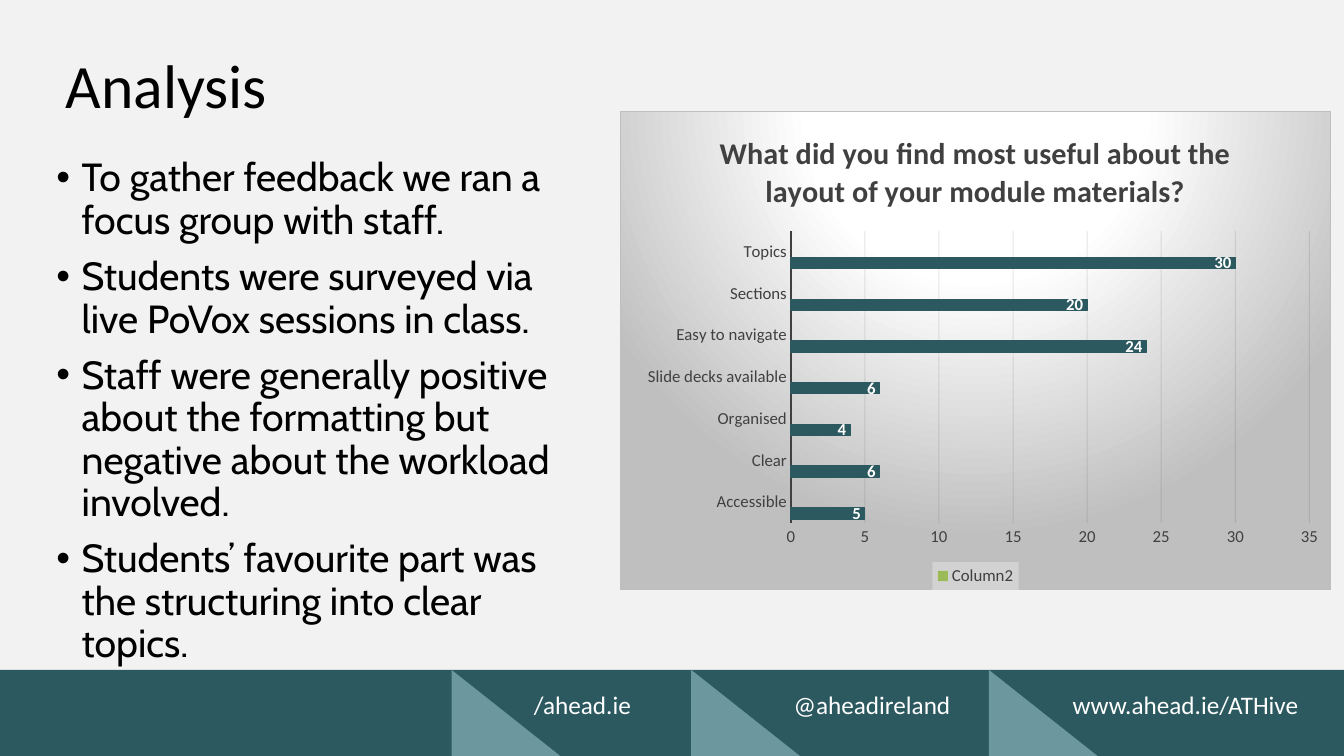
from dataclasses import dataclass
from lxml.etree import SubElement
from pptx import Presentation
from pptx.chart.data import CategoryChartData as ChartData
from pptx.dml.color import RGBColor as Color
from pptx.enum.chart import XL_CHART_TYPE as Kind, XL_LABEL_POSITION as Spot
from pptx.enum.chart import XL_LEGEND_POSITION as Side, XL_TICK_MARK as Tick
from pptx.enum.shapes import MSO_SHAPE as Shape
from pptx.enum.text import MSO_ANCHOR as Anchor, PP_ALIGN as Align
from pptx.oxml import parse_xml
from pptx.oxml.ns import nsdecls, qn
from pptx.util import Cm, Pt


@dataclass(frozen=True)
class Theme:
    back: str = "F2F2F2"
    teal: str = "2C595F"
    pale: str = "6C979E"
    ink: str = "000000"
    grey: str = "404040"
    edge: str = "BFBFBF"
    grid: str = "0D0D0D"
    white: str = "FFFFFF"
    sans: str = "Calibri"
    text: str = "Cabin"
    head: float = 44
    body: float = 28
    link: float = 18
    title: float = 21.6
    label: float = 12


THEME = Theme()
POINTS = [
    "To gather feedback we ran a focus group with staff.",
    "Students were surveyed via live PoVox sessions in class.",
    "Staff were generally positive about the formatting but negative "
    "about the workload involved.",
    "Students’ favourite part was the structuring into clear topics.",
]
# Left edge of each triangle, right edge of its text, text
LINKS = [
    (11.38, 16.15, "/ahead.ie"),
    (17.42, 24.2, "@aheadireland"),
    (24.92, 32.97, "www.ahead.ie/ATHive"),
]
QUESTION = "What did you find most useful about the layout of your module materials?"
VOTES = {"Accessible": 5, "Clear": 6, "Organised": 4, "Slide decks available": 6,
         "Easy to navigate": 24, "Sections": 20, "Topics": 30}


def style(font, size, color, name=THEME.sans, bold=False):
    font.name, font.size, font.bold = name, Pt(size), bold
    font.color.rgb = Color.from_string(color)


def paint(fill, color):
    fill.solid()
    fill.fore_color.rgb = Color.from_string(color)


def block(slide, kind, box, color):
    shape = slide.shapes.add_shape(kind, *map(Cm, box))
    shape.shadow.inherit = False
    paint(shape.fill, color)
    shape.line.fill.background()


def footer(slide, box):
    left, top, width, height = box
    block(slide, Shape.RECTANGLE, box, THEME.teal)
    for start, end, text in LINKS:
        block(slide, Shape.RIGHT_TRIANGLE, (left + start, top, 2.74, height), THEME.pale)
        label = slide.shapes.add_textbox(
            Cm(left + start), Cm(top + 0.25), Cm(end - start), Cm(1.32))
        frame = label.text_frame
        frame.word_wrap = True
        frame.margin_top = frame.margin_right = Cm(0.25)
        line = frame.paragraphs[0]
        line.text, line.alignment = text, Align.RIGHT
        style(line.font, THEME.link, THEME.white)


def heading(slide, box):
    title = slide.shapes.title
    title.left, title.top, title.width, title.height = map(Cm, box)
    title.text_frame.vertical_anchor = Anchor.MIDDLE
    line = title.text_frame.paragraphs[0]
    line.text, line.alignment, line.line_spacing = "Analysis", Align.LEFT, 0.9
    style(line.font, THEME.head, THEME.ink)


def bullets(slide, box):
    frame = slide.shapes.add_textbox(*map(Cm, box)).text_frame
    frame.word_wrap = True
    for i, text in enumerate(POINTS):
        line = frame.add_paragraph() if i else frame.paragraphs[0]
        line.text, line.line_spacing = text, 0.9
        line.space_before = Pt(10 if i else 0)
        props = line._p.get_or_add_pPr()
        props.set("marL", str(Cm(0.64)))
        props.set("indent", str(-Cm(0.64)))
        SubElement(props, qn("a:buFont"), typeface="Arial")
        SubElement(props, qn("a:buChar"), char="•")
        style(line.font, THEME.body, THEME.ink, THEME.text)


def fade(color, share):
    """Set the opacity, in percent, of the solid colour inside an element."""
    SubElement(color.find(".//" + qn("a:srgbClr")), qn("a:alpha"), val=str(share * 1000))


def backdrop(chart):
    """Give the chart area a radial gradient and a thin border."""
    stops = [(0, THEME.white), (39, THEME.white), (100, THEME.edge)]
    marks = "".join(f'<a:gs pos="{at * 1000}"><a:srgbClr val="{color}"/></a:gs>'
                    for at, color in stops)
    chart._chartSpace.find(qn("c:chart")).addnext(parse_xml(
        f'<c:spPr {nsdecls("c", "a")}><a:gradFill><a:gsLst>{marks}</a:gsLst>'
        '<a:path path="circle"><a:fillToRect l="50000" t="-80000" r="50000" b="180000"/>'
        f'</a:path></a:gradFill><a:ln w="{Pt(0.75)}"><a:solidFill>'
        f'<a:srgbClr val="{THEME.edge}"/></a:solidFill></a:ln></c:spPr>'))


def arrange(chart, x, y, w, h):
    """Place the inner plot by shares of the chart's size."""
    area = chart._chartSpace.find(".//" + qn("c:plotArea"))
    for old in area.findall(qn("c:layout")):
        area.remove(old)
    area.insert(0, parse_xml(
        f'<c:layout {nsdecls("c")}><c:manualLayout><c:layoutTarget val="inner"/>'
        '<c:xMode val="edge"/><c:yMode val="edge"/>'
        f'<c:x val="{x}"/><c:y val="{y}"/><c:w val="{w}"/><c:h val="{h}"/>'
        '</c:manualLayout></c:layout>'))


def key(chart):
    """Show a legend for the first series only."""
    chart.has_legend = True
    legend = chart.legend
    legend.position, legend.include_in_layout = Side.BOTTOM, False
    style(legend.font, THEME.label, THEME.grey)
    root = legend._element
    for i in (2, 1):
        root.find(qn("c:legendPos")).addnext(parse_xml(
            f'<c:legendEntry {nsdecls("c")}><c:idx val="{i}"/><c:delete val="1"/>'
            '</c:legendEntry>'))
    tint = parse_xml(
        f'<c:spPr {nsdecls("c", "a")}><a:solidFill><a:srgbClr val="{THEME.back}"/>'
        '</a:solidFill></c:spPr>')
    fade(tint, 39)
    root.find(qn("c:txPr")).addprevious(tint)


def axes(chart):
    cats, vals = chart.category_axis, chart.value_axis
    for axis in (cats, vals):
        axis.major_tick_mark = axis.minor_tick_mark = Tick.NONE
        style(axis.tick_labels.font, THEME.label, THEME.grey)
    paint(cats.format.line.fill, THEME.grey)
    cats.format.line.width = Pt(1.5)
    vals.minimum_scale, vals.maximum_scale, vals.major_unit = 0, 35, 5
    vals.format.line.fill.background()
    vals.has_major_gridlines = True
    grid = vals.major_gridlines.format.line
    paint(grid.fill, THEME.grid)
    grid.width = Pt(0.75)
    fade(vals._element.find(qn("c:majorGridlines")), 10)


def survey(slide, box):
    data = ChartData()
    data.categories = list(VOTES)
    data.add_series("No. of responses", list(VOTES.values()))
    for name in ("Series 2", "Column2"):
        data.add_series(name, [None] * len(VOTES))
    chart = slide.shapes.add_chart(Kind.BAR_CLUSTERED, *map(Cm, box), data).chart
    style(chart.font, 10, THEME.ink)
    chart.has_title = True
    line = chart.chart_title.text_frame.paragraphs[0]
    line.text = QUESTION
    style(line.font, THEME.title, THEME.grey, bold=True)
    plot = chart.plots[0]
    plot.gap_width, plot.overlap, plot.vary_by_categories = 65, 0, False
    bars = plot.series[0]
    paint(bars.format.fill, THEME.teal)
    paint(bars.format.line.fill, THEME.teal)
    bars.format.line.width = Pt(0.75)
    labels = bars.data_labels
    labels.show_value, labels.position = True, Spot.INSIDE_END
    style(labels.font, THEME.label, THEME.white, bold=True)
    axes(chart)
    key(chart)
    arrange(chart, 0.24, 0.25, 0.73, 0.61)
    backdrop(chart)


def main():
    deck = Presentation()
    deck.slide_width, deck.slide_height = Cm(33.87), Cm(19.05)
    slide = deck.slides.add_slide(deck.slide_layouts[5])
    paint(slide.background.fill, THEME.back)
    footer(slide, (0, 16.88, 33.87, 2.17))
    heading(slide, (1.4, 0.4, 29.21, 3.68))
    bullets(slide, (1.17, 3.86, 13.97, 12.09))
    survey(slide, (15.62, 2.79, 17.93, 12.09))
    deck.save("out.pptx")


if __name__ == "__main__":
    main()
